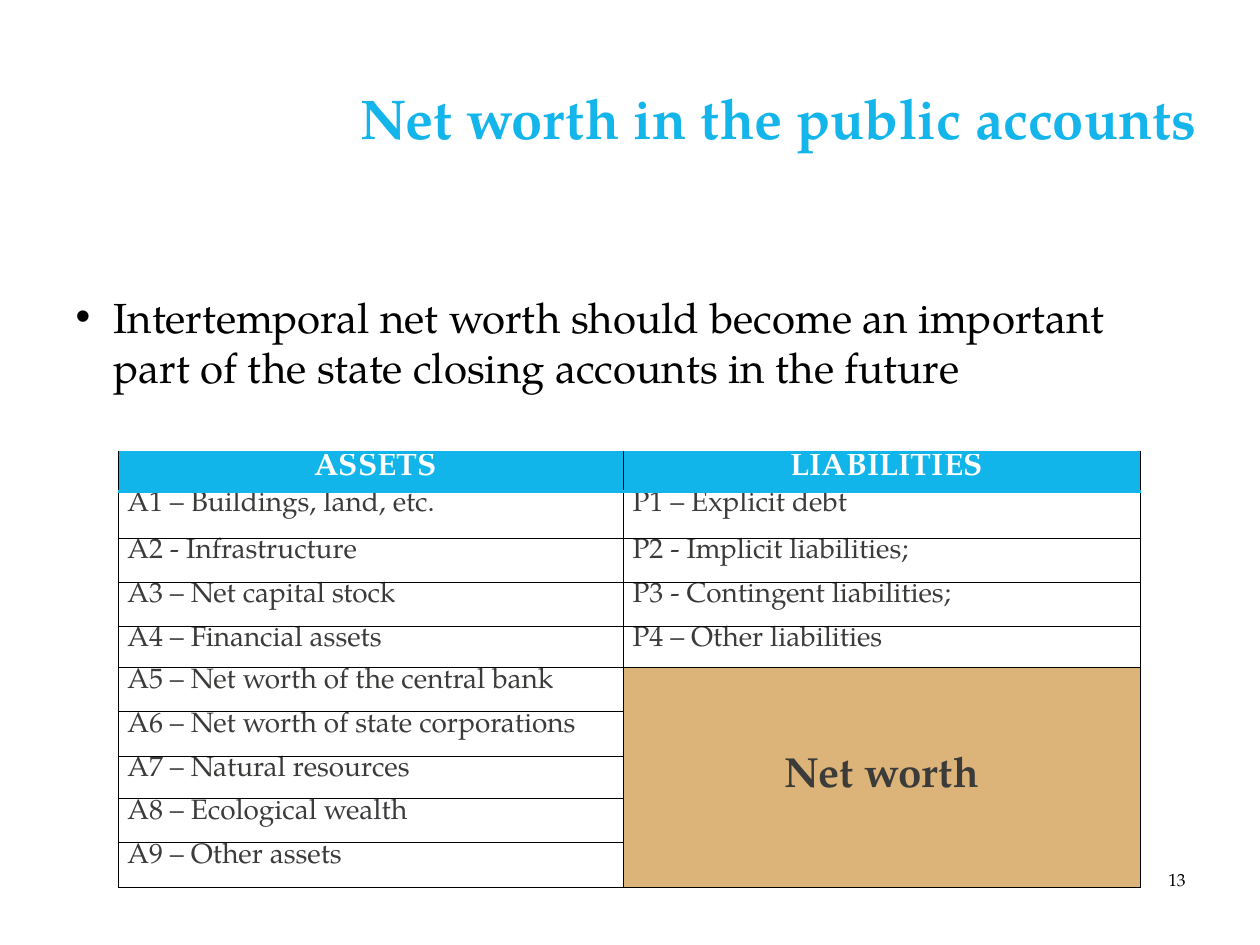
from lxml import etree
from pptx import Presentation
from pptx.dml.color import RGBColor
from pptx.enum import text as t
from pptx.oxml import ns
from pptx.util import Inches, Pt

FONT = "TeX Gyre Pagella"
BLUE = RGBColor(0x13, 0xB5, 0xEA)
HEAD = RGBColor(0x12, 0xB5, 0xEA)
TAN = RGBColor(0xDC, 0xB4, 0x7A)
GREY = RGBColor(0x3B, 0x3B, 0x3A)
BLACK = RGBColor(0, 0, 0)
WHITE = RGBColor(255, 255, 255)
LEFT, MID, RIGHT = t.PP_ALIGN.LEFT, t.PP_ALIGN.CENTER, t.PP_ALIGN.RIGHT

ASSETS = [
    "A1 – Buildings, land, etc.", "A2 - Infrastructure",
    "A3 – Net capital stock", "A4 – Financial assets",
    "A5 – Net worth of the central bank",
    "A6 – Net worth of state corporations", "A7 – Natural resources",
    "A8 – Ecological wealth", "A9 – Other assets",
]
DEBTS = [
    "P1 – Explicit debt", "P2 - Implicit liabilities;",
    "P3 - Contingent liabilities;", "P4 – Other liabilities",
]
COLS = [4.01, 4.1]
ROWS = [0.31, 0.37, 0.35, 0.35, 0.33, 0.35, 0.35, 0.34, 0.35, 0.35]


def place(shape, box):
    shape.left, shape.top, shape.width, shape.height = map(Inches, box)


def trim(frame):
    frame.margin_left = frame.margin_right = 0
    frame.margin_top = frame.margin_bottom = 0


def write(para, words, size, color, bold=False, align=LEFT):
    para.alignment = align
    run = para.add_run()
    run.text = words
    font = run.font
    font.name, font.size, font.bold = FONT, Pt(size), bold
    font.color.rgb = color


def indent(para, left, first=0):
    props = para._p.get_or_add_pPr()
    props.set("marL", str(Inches(left)))
    props.set("indent", str(Inches(first)))
    return props


def add_title(slide, box):
    shape = slide.shapes.title
    place(shape, box)
    frame = shape.text_frame
    trim(frame)
    frame.auto_size = t.MSO_AUTO_SIZE.NONE
    frame.vertical_anchor = t.MSO_ANCHOR.MIDDLE
    para = frame.paragraphs[0]
    indent(para, 1.62)
    write(para, "Net worth in the public accounts", 32, BLUE, True, RIGHT)


def add_body(slide, box):
    shape = slide.placeholders[1]
    place(shape, box)
    frame = shape.text_frame
    frame.auto_size = t.MSO_AUTO_SIZE.NONE
    para = frame.paragraphs[0]
    props = indent(para, 0.3, -0.3)
    etree.SubElement(props, ns.qn("a:buChar")).set("char", "•")
    para.space_before = Pt(0)
    write(para, "Intertemporal net worth should become an important "
          "part of the state closing accounts in the future", 24, BLACK)


def add_page(slide, box):
    frame = slide.shapes.add_textbox(*map(Inches, box)).text_frame
    trim(frame)
    frame.word_wrap = True
    write(frame.paragraphs[0], "13", 10, BLACK, align=RIGHT)


def edge(cell, side, color, width):
    line = etree.SubElement(cell._tc.get_or_add_tcPr(), ns.qn("a:ln" + side))
    line.set("w", str(Pt(width)))
    fill = etree.SubElement(line, ns.qn("a:solidFill"))
    etree.SubElement(fill, ns.qn("a:srgbClr")).set("val", str(color))


def style(cell, row):
    trim(cell)
    thick = {"T": 1.7, "B": 1.58} if row == 0 else {"T": 1.58} if row == 1 else {}
    for side in "LRTB":
        if side in thick:
            edge(cell, side, HEAD, thick[side])
        else:
            edge(cell, side, BLACK, 0.59)
    if row == 0:
        cell.fill.solid()
        cell.fill.fore_color.rgb = HEAD
    else:
        cell.fill.background()


def add_sheet(slide, box):
    frame = slide.shapes.add_table(len(ROWS), len(COLS), *map(Inches, box))
    table = frame.table
    table.first_row = table.horz_banding = False
    for col, width in zip(table.columns, COLS):
        col.width = Inches(width)
    for line, height in zip(table.rows, ROWS):
        line.height = Inches(height)
    for row in range(len(ROWS)):
        for col in range(len(COLS)):
            style(table.cell(row, col), row)
    for col, words in enumerate([["ASSETS"] + ASSETS, ["LIABILITIES"] + DEBTS]):
        for row, word in enumerate(words):
            para = table.cell(row, col).text_frame.paragraphs[0]
            indent(para, 0.07)
            if row == 0:
                write(para, word, 18, WHITE, True, MID)
            else:
                write(para, word, 16, GREY)
    worth = table.cell(len(DEBTS) + 1, 1)
    worth.merge(table.cell(len(ROWS) - 1, 1))
    worth.fill.solid()
    worth.fill.fore_color.rgb = TAN
    worth.vertical_anchor = t.MSO_ANCHOR.MIDDLE
    write(worth.text_frame.paragraphs[0], "Net worth", 24, GREY, True, MID)


def main():
    deck = Presentation()
    deck.slide_width, deck.slide_height = Inches(10), Inches(7.5)
    slide = deck.slides.add_slide(deck.slide_layouts[1])
    add_title(slide, (0.5, 0.66, 9, 0.54))
    add_page(slide, (9.17, 6.9, 0.24, 0.17))
    add_sheet(slide, (0.94, 3.59, sum(COLS), sum(ROWS)))
    add_body(slide, (0.5, 2.26, 9, 1))
    deck.save("out.pptx")


if __name__ == "__main__":
    main()
